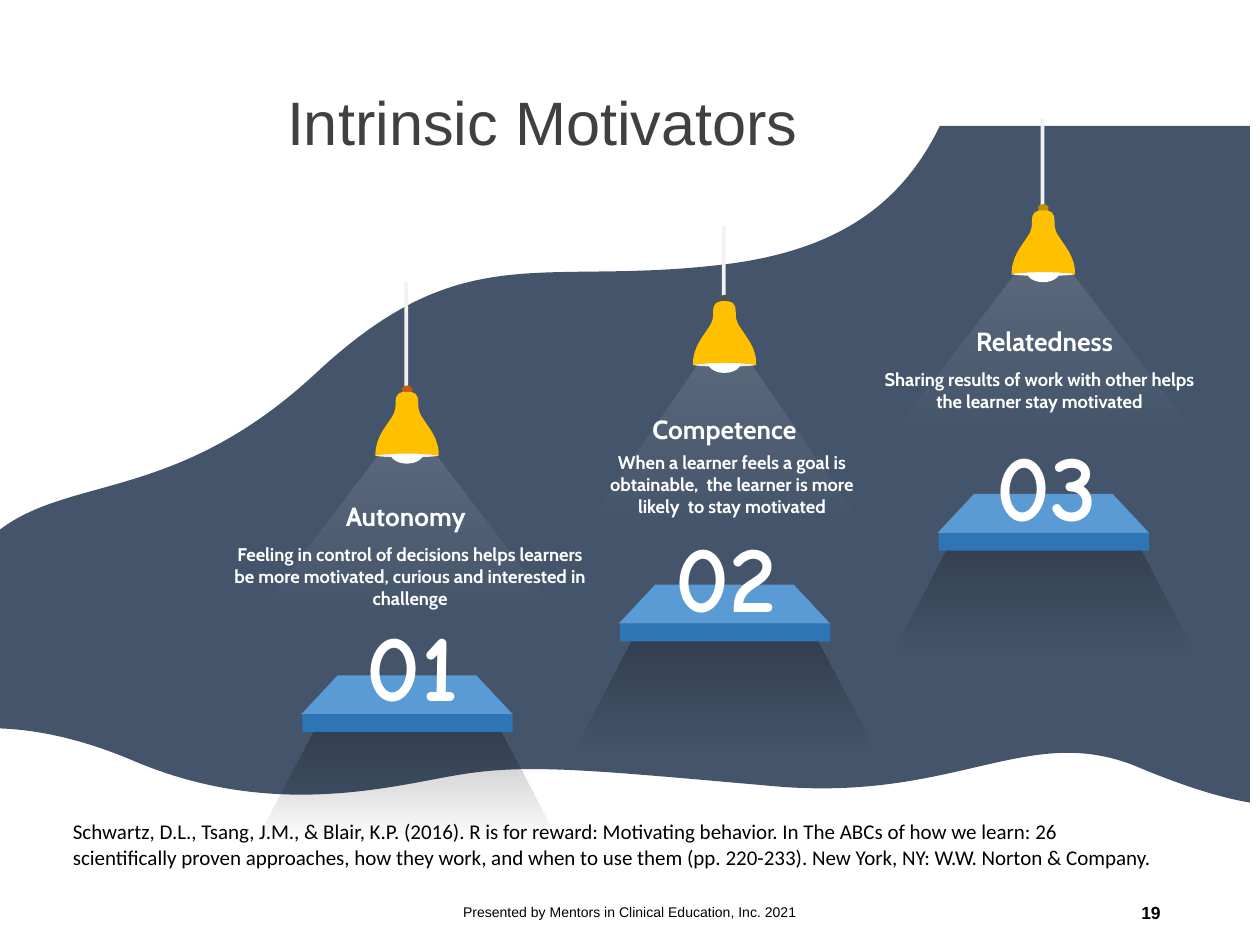
import dataclasses
import lxml.etree
import pptx
import pptx.dml.color
import pptx.enum.shapes
import pptx.enum.text
import pptx.oxml.ns
import pptx.util

Inches = pptx.util.Inches
qn = pptx.oxml.ns.qn
SHAPE = pptx.enum.shapes.MSO_SHAPE
ALIGN = pptx.enum.text.PP_ALIGN
ANCHOR = pptx.enum.text.MSO_ANCHOR


@dataclasses.dataclass(frozen=True)
class Theme:
    hill: str = "44546A"
    white: str = "FFFFFF"
    black: str = "000000"
    title: str = "404040"
    cord: str = "F2F2F2"
    shade: str = "FFC000"
    shelf_top: str = "5B9BD5"
    shelf_front: str = "2E75B6"
    base_font: str = "Arial"
    label_font: str = "Cabin"
    number_font: str = "Comic Neue"
    citation_font: str = "Calibri"
    title_size: float = 35
    number_size: float = 54
    heading_size: float = 15
    body_size: float = 10.5
    citation_size: float = 12
    page_size: float = 10
    footer_size: float = 8


T = Theme()


@dataclasses.dataclass(frozen=True)
class Stage:
    number: str
    heading: str
    body: str
    x: float             # lamp axis
    y: float             # top of the lamp shade
    cord: tuple          # top and height, from y
    cap: str
    rim: str
    beam: tuple          # half widths at top and bottom
    heading_at: tuple    # this and the next two: from (x, y)
    body_box: tuple
    number_at: tuple
    shadow_y: float


STAGES = [
    Stage("01", "Autonomy",
          "Feeling in control of decisions helps learners be more motivated, "
          "curious and interested in challenge",
          3.23, 3.11, (-0.87, 0.94), "C55A11", "EDEDED", (0.22, 1.22),
          (-0.99, 0.86), (-1.42, 1.2, 2.89, 0.53), (-0.42, 1.7), 2.65),
    Stage("02", "Competence",
          "When a learner feels a goal is obtainable,  the learner is more "
          "likely  to stay motivated",
          5.75, 2.39, (-0.6, 0.67), "525252", "EDEDED", (0.2, 1.11),
          (-0.98, 0.89), (-0.97, 1.19, 2.06, 0.53), (-0.45, 1.72), 2.65),
    Stage("03", "Relatedness",
          "Sharing results of work with other helps the learner stay motivated",
          8.28, 1.67, (-0.73, 0.8), "BF9000", "FFFFFF", (0.22, 1.22),
          (-0.97, 0.91), (-1.29, 1.25, 2.52, 0.35), (-0.44, 1.71), 2.59),
]


def rgb(color):
    return pptx.dml.color.RGBColor.from_string(color)


def paint(sp, color):
    sp.shadow.inherit = False
    sp.line.fill.background()
    sp.fill.solid()
    sp.fill.fore_color.rgb = rgb(color)
    return sp


def fade(sp, color, opacity):
    """Fill downwards from the given opacity (percent) to clear."""
    sp.fill.gradient()
    sp.fill.gradient_angle = 270
    for stop in sp.fill.gradient_stops:
        stop.color.rgb = rgb(color)
    clrs = list(sp._element.spPr.iter(qn("a:srgbClr")))
    for clr, alpha in zip(clrs, (opacity, 0)):
        lxml.etree.SubElement(clr, qn("a:alpha")).set("val", str(alpha * 1000))


def add_block(s, shape, x, y, w, h, color):
    sp = s.shapes.add_shape(shape, Inches(x), Inches(y), Inches(w), Inches(h))
    return paint(sp, color)


def add_outline(s, x, y, path, color):
    """Closed outline; a step of six numbers is a cubic curve, of two a line."""
    ends = [(Inches(x + step[-2]), Inches(y + step[-1])) for step in path]
    fb = s.shapes.build_freeform(*ends[0], scale=1.0)
    fb.add_line_segments(ends[1:], close=True)
    sp = fb.convert_to_shape()
    left, top = min(e[0] for e in ends), min(e[1] for e in ends)
    lines = list(sp._element.iter(qn("a:lnTo")))
    for line, step in zip(lines, path[1:]):
        if len(step) == 6:
            curve = lxml.etree.Element(qn("a:cubicBezTo"))
            for px, py in zip(step[::2], step[1::2]):
                pt = lxml.etree.SubElement(curve, qn("a:pt"))
                pt.set("x", str(Inches(x + px) - left))
                pt.set("y", str(Inches(y + py) - top))
            line.getparent().replace(line, curve)
    return paint(sp, color)


def add_trapezoid(s, x, y, top, bottom, h, color):
    """Trapezoid centred on x, with half widths top and bottom."""
    path = [(-top, 0), (top, 0), (bottom, h), (-bottom, h)]
    return add_outline(s, x, y, path, color)


def add_text(s, text, x, y, w, h, *, font, size, color=T.white, bold=False,
             align=ALIGN.LEFT, anchor=ANCHOR.TOP, wrap=True, inset=True, spacing=None):
    tf = s.shapes.add_textbox(Inches(x), Inches(y), Inches(w), Inches(h)).text_frame
    tf.word_wrap = wrap
    tf.vertical_anchor = anchor
    if not inset:
        tf.margin_left = tf.margin_right = tf.margin_top = tf.margin_bottom = 0
    p = tf.paragraphs[0]
    p.alignment = align
    if spacing:
        p.line_spacing = spacing
    r = p.add_run()
    r.text = text
    r.font.name, r.font.size, r.font.bold = font, pptx.util.Pt(size), bold
    r.font.color.rgb = rgb(color)


def add_hill(s, x, y):
    path = [
        (7.54, 0), (7.24, 0.61, 6.74, 1.01, 5.73, 1.11),
        (4.33, 1.26, 3.74, 0.89, 2.59, 1.96), (1.44, 3.03, 0.57, 2.75, 0, 3.27),
        (0, 4.78), (0.32, 4.78, 0.69, 4.85, 1.12, 5.03),
        (2.23, 5.51, 3.18, 5.24, 3.72, 5.15), (4.26, 5.06, 4.75, 5.11, 6.22, 5.24),
        (7.69, 5.37, 8.25, 4.71, 9.14, 5.1), (9.55, 5.27, 9.82, 5.34, 10, 5.37),
        (10, 0),
    ]
    add_outline(s, x, y, path, T.hill)


def add_lamp(s, st):
    x, y = st.x, st.y
    cord_y, cord_h = st.cord
    add_block(s, SHAPE.RECTANGLE, x - 0.02, y + cord_y, 0.03, cord_h, T.cord)
    add_block(s, SHAPE.OVAL, x - 0.25, y + 0.49, 0.5, 0.03, st.rim)
    add_block(s, SHAPE.OVAL, x - 0.13, y + 0.41, 0.26, 0.16, T.white)
    cap = [(0.04, 0.07), (0.04, 0.07, 0.04, 0.03, 0.04, 0.02),
           (0.03, 0.01, 0.02, 0, 0, 0), (-0.02, 0, -0.03, 0.01, -0.04, 0.02),
           (-0.04, 0.03, -0.04, 0.07, -0.04, 0.07)]
    add_outline(s, x, y - 0.05, cap, st.cap)
    shade = [(0.18, 0.29), (0.1, 0.17, 0.09, 0.17, 0.09, 0.09),
             (0.09, 0.01, 0.06, 0, 0, 0), (-0.06, 0, -0.09, 0.01, -0.09, 0.09),
             (-0.09, 0.17, -0.1, 0.17, -0.18, 0.29),
             (-0.26, 0.41, -0.25, 0.5, -0.25, 0.51),
             (-0.25, 0.5, -0.14, 0.49, 0, 0.49), (0.14, 0.49, 0.25, 0.5, 0.25, 0.51),
             (0.25, 0.51, 0.27, 0.42, 0.18, 0.29)]
    add_outline(s, x, y, shade, T.shade)


def add_shelf(s, st):
    x, y = st.x, st.y + 2.25
    fade(add_trapezoid(s, x, st.y + st.shadow_y, 0.72, 1.2, 0.92, T.black), T.black, 26)
    shelf = s.shapes.add_group_shape()
    add_trapezoid(shelf, x, y, 0.55, 0.84, 0.31, T.shelf_top)
    add_block(shelf, SHAPE.RECTANGLE, x - 0.83, y + 0.31, 1.67, 0.14, T.shelf_front)


def add_stage(s, st):
    fade(add_trapezoid(s, st.x, st.y + 0.49, *st.beam, 1.31, T.white), T.white, 12)
    add_shelf(s, st)
    add_lamp(s, st)
    label = dict(bold=True, align=ALIGN.CENTER, inset=False)
    bx, by, bw, bh = st.body_box
    add_text(s, st.body, st.x + bx, st.y + by, bw, bh,
             font=T.label_font, size=T.body_size, **label)
    hx, hy = st.heading_at
    add_text(s, st.heading, st.x + hx, st.y + hy, 1.96, 0.25,
             font=T.label_font, size=T.heading_size, anchor=ANCHOR.BOTTOM, **label)
    nx, ny = st.number_at
    add_text(s, st.number, st.x + nx, st.y + ny, 0.93, 0.91, font=T.number_font,
             size=T.number_size, anchor=ANCHOR.MIDDLE, wrap=False, **label)


def add_footer(s, x, y):
    row = dict(font=T.base_font, color=T.black, anchor=ANCHOR.MIDDLE)
    add_text(s, "Presented by Mentors in Clinical Education, Inc. 2021", x, y, 3.38, 0.4,
             size=T.footer_size, align=ALIGN.CENTER, **row)
    add_text(s, "19", x + 3.75, y, 2.25, 0.4,
             size=T.page_size, bold=True, align=ALIGN.RIGHT, **row)


def main():
    prs = pptx.Presentation()
    prs.slide_width, prs.slide_height = Inches(10), Inches(7.5)
    s = prs.slides.add_slide(prs.slide_layouts[6])
    # Background and title
    add_hill(s, -0.08, 1)
    add_text(s, "Intrinsic Motivators", 2.18, 0.27, 7.14, 1.45, font=T.base_font,
             size=T.title_size, color=T.title, anchor=ANCHOR.MIDDLE, spacing=0.9)
    # Lamps, shelves and labels
    for st in STAGES:
        add_stage(s, st)
    # Footer and citation
    add_footer(s, 3.31, 7.04)
    add_text(s, "Schwartz, D.L., Tsang, J.M., & Blair, K.P. (2016). R is for reward: "
             "Motivating behavior. In The ABCs of how we learn: 26 scientifically proven "
             "approaches, how they work, and when to use them (pp. 220-233). New York, NY: "
             "W.W. Norton & Company.", 0.48, 6.45, 8.88, 0.5,
             font=T.citation_font, size=T.citation_size, color=T.black)
    prs.save("out.pptx")


if __name__ == "__main__":
    main()
